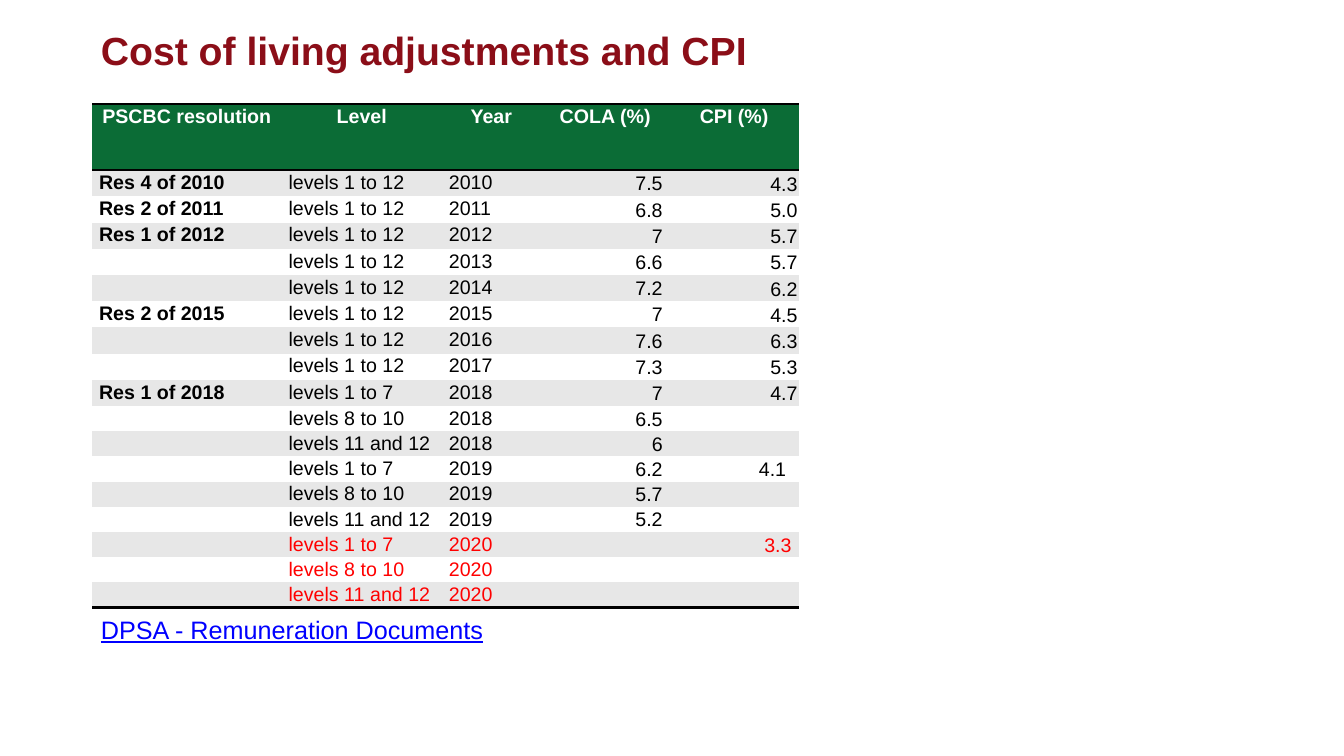
from dataclasses import dataclass

from lxml.etree import SubElement
from pptx import Presentation
from pptx.dml.color import RGBColor
from pptx.enum.text import MSO_ANCHOR, PP_ALIGN
from pptx.oxml.ns import qn
from pptx.util import Pt


@dataclass(frozen=True)
class Theme:
    font: str = "Arial"
    title: str = "8B0E18"
    header: str = "0B6C36"
    band: str = "E7E7E7"
    white: str = "FFFFFF"
    ink: str = "000000"
    pending: str = "FF0000"
    link: str = "0000FF"
    title_size: int = 28
    body_size: int = 18
    table_size: int = 14


HEADINGS = ["PSCBC resolution", "Level", "Year", "COLA (%)", "CPI (%)"]
ALL, LOW, MID, HIGH = "levels 1 to 12", "levels 1 to 7", "levels 8 to 10", "levels 11 and 12"
ADJUSTMENTS = [
    ("Res 4 of 2010", ALL, "2010", "7.5", "4.3"),
    ("Res 2 of 2011", ALL, "2011", "6.8", "5.0"),
    ("Res 1 of 2012", ALL, "2012", "7", "5.7"),
    ("", ALL, "2013", "6.6", "5.7"),
    ("", ALL, "2014", "7.2", "6.2"),
    ("Res 2 of 2015", ALL, "2015", "7", "4.5"),
    ("", ALL, "2016", "7.6", "6.3"),
    ("", ALL, "2017", "7.3", "5.3"),
    ("Res 1 of 2018", LOW, "2018", "7", "4.7"),
    ("", MID, "2018", "6.5", ""),
    ("", HIGH, "2018", "6", ""),
    ("", LOW, "2019", "6.2", "4.1 "),
    ("", MID, "2019", "5.7", ""),
    ("", HIGH, "2019", "5.2", ""),
    ("", LOW, "2020", "", "3.3"),
    ("", MID, "2020", "", ""),
    ("", HIGH, "2020", "", ""),
]
COLUMN_WIDTHS = [135.4, 114.5, 70.6, 92.1, 92.1]
HEADER_HEIGHT, ROW_HEIGHT, TABLE_HEIGHT = 47.5, 14.4, 331.2
NO_STYLE = "{2D5ABB26-0587-4C30-8999-92F81FD0307C}"


class Deck:
    def __init__(self, theme):
        self.theme = theme
        self.prs = Presentation()
        self.prs.slide_width, self.prs.slide_height = Pt(960), Pt(540)
        self.s = self.prs.slides.add_slide(self.prs.slide_layouts[6])

    def run(self, p, text, size, color, bold=False, underline=False):
        r = p.add_run()
        r.text = text
        r.font.name, r.font.size = self.theme.font, Pt(size)
        r.font.bold, r.font.underline = bold, underline
        r.font.color.rgb = RGBColor.from_string(color)

    def text(self, x, y, w, h, text, size, color, anchor=MSO_ANCHOR.TOP, **style):
        tf = self.s.shapes.add_textbox(Pt(x), Pt(y), Pt(w), Pt(h)).text_frame
        tf.word_wrap = True
        tf.vertical_anchor = anchor
        self.run(tf.paragraphs[0], text, size, color, **style)

    def border(self, cell, side):
        ln = SubElement(cell._tc.get_or_add_tcPr(), qn("a:" + side), w=str(Pt(2)))
        fill = SubElement(ln, qn("a:solidFill"))
        SubElement(fill, qn("a:srgbClr"), val=self.theme.ink)

    def cell(self, cell, text, fill, color, align, bold=False, middle=False, tight=False, sides=()):
        for side in sides:
            self.border(cell, side)
        cell.fill.solid()
        cell.fill.fore_color.rgb = RGBColor.from_string(fill)
        cell.margin_left = cell.margin_right = Pt(0.72 if tight else 5)
        cell.margin_top, cell.margin_bottom = Pt(0.72 if tight else 0), Pt(0)
        cell.vertical_anchor = MSO_ANCHOR.MIDDLE if middle else MSO_ANCHOR.TOP
        p = cell.text_frame.paragraphs[0]
        size = self.theme.table_size
        if text:
            p.alignment, p.line_spacing, p.space_after = align, 1.07, Pt(8)
            self.run(p, text, size, color, bold)
        else:
            SubElement(p._p, qn("a:endParaRPr"), sz=str(size * 100))

    def table(self, x, y, widths, headings, rows):
        t = self.theme
        last = len(rows)
        frame = self.s.shapes.add_table(last + 1, len(widths), Pt(x), Pt(y),
                                        Pt(sum(widths)), Pt(TABLE_HEIGHT))
        tbl = frame.table
        tbl.first_row = tbl.horz_banding = False
        tbl._tbl.tblPr.find(qn("a:tableStyleId")).text = NO_STYLE
        for col, width in zip(tbl.columns, widths):
            col.width = Pt(width)
        for i, row in enumerate(tbl.rows):
            row.height = Pt(ROW_HEIGHT if i else HEADER_HEIGHT)
        frame.height = Pt(TABLE_HEIGHT)

        # Header row
        for j, heading in enumerate(headings):
            self.cell(tbl.cell(0, j), heading, t.header, t.white, PP_ALIGN.CENTER,
                      bold=True, sides=("lnT", "lnB"))

        # Banded rows, with the undecided year in red
        for i, values in enumerate(rows, 1):
            year = int(values[2])
            for j, value in enumerate(values):
                number = j >= 3
                self.cell(tbl.cell(i, j), value,
                          t.band if i % 2 else t.white,
                          t.pending if year == 2020 else t.ink,
                          PP_ALIGN.RIGHT if number else PP_ALIGN.JUSTIFY,
                          bold=j == 0, middle=number,
                          tight=j == 4 and year <= 2018,
                          sides=("lnB",) if i == last else ())


def main():
    theme = Theme()
    deck = Deck(theme)
    # Title
    deck.text(65, 19.4, 828.7, 32.4, "Cost of living adjustments and CPI",
              theme.title_size, theme.title, MSO_ANCHOR.MIDDLE, bold=True)
    # Adjustments by resolution
    deck.table(65.8, 74.1, COLUMN_WIDTHS, HEADINGS, ADJUSTMENTS)
    # Source line
    deck.text(65, 435, 462.2, 29, "DPSA - Remuneration Documents",
              theme.body_size, theme.link, underline=True)
    deck.prs.save("out.pptx")


if __name__ == "__main__":
    main()
